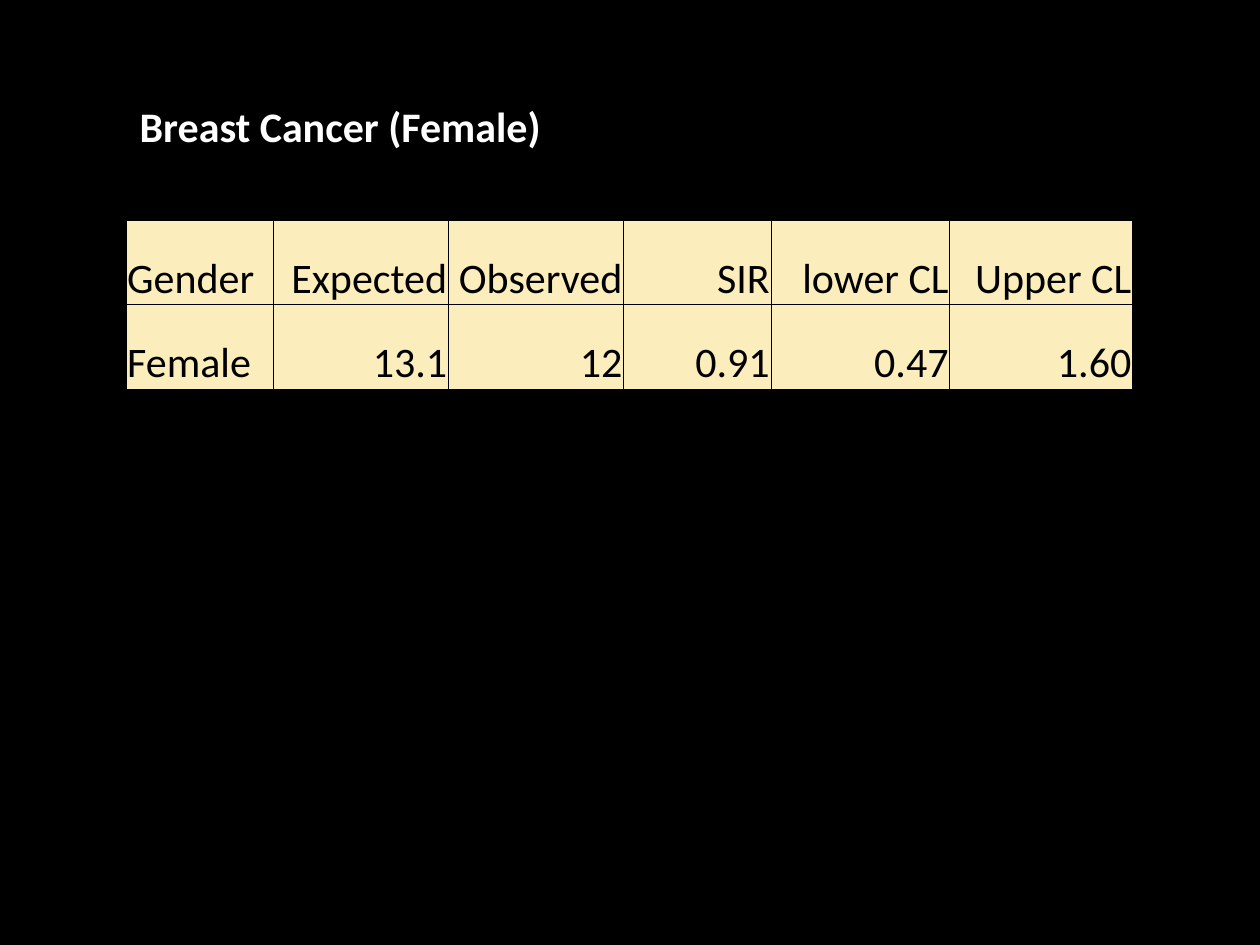
from lxml.etree import SubElement
from pptx import Presentation
from pptx.dml.color import RGBColor
from pptx.enum.text import MSO_ANCHOR, MSO_AUTO_SIZE, PP_ALIGN
from pptx.oxml.ns import qn
from pptx.util import Inches, Pt

TITLE = "Breast Cancer (Female)"
ROWS = [
    ("Gender", "Expected", "Observed", "SIR", "lower CL", "Upper CL"),
    ("Female", "13.1", "12", "0.91", "0.47", "1.60"),
]
COL_WIDTHS = [1.17, 1.39, 1.39, 1.17, 1.42, 1.45]
ROW_HEIGHT = 0.67
COLORS = {"black": "000000", "white": "FFFFFF", "cream": "FCEEBC"}


def rgb(name):
    return RGBColor.from_string(COLORS[name])


def style(p, color, bold=False):
    p.font.name = "Calibri"
    p.font.size = Pt(24)
    p.font.bold = bold
    p.font.color.rgb = rgb(color)


def add_borders(cell):
    tc_pr = cell._tc.get_or_add_tcPr()
    for side in ("lnL", "lnR", "lnT", "lnB"):
        ln = SubElement(tc_pr, qn(f"a:{side}"), w=str(Pt(0.5)))
        fill = SubElement(ln, qn("a:solidFill"))
        SubElement(fill, qn("a:srgbClr"), val=COLORS["black"])


def fill_cell(cell, text, align):
    add_borders(cell)
    cell.fill.solid()
    cell.fill.fore_color.rgb = rgb("cream")
    cell.margin_left = cell.margin_right = cell.margin_top = Inches(0.01)
    cell.margin_bottom = 0
    cell.vertical_anchor = MSO_ANCHOR.BOTTOM
    cell.text = text
    p = cell.text_frame.paragraphs[0]
    p.alignment = align
    style(p, "black")


def add_results(s):
    table = s.shapes.add_table(
        len(ROWS), len(COL_WIDTHS), Inches(1), Inches(1.75),
        Inches(sum(COL_WIDTHS)), Inches(ROW_HEIGHT * len(ROWS))).table
    for column, width in zip(table.columns, COL_WIDTHS):
        column.width = Inches(width)
    for i, row in enumerate(ROWS):
        table.rows[i].height = Inches(ROW_HEIGHT)
        for j, text in enumerate(row):
            align = PP_ALIGN.RIGHT if j else PP_ALIGN.LEFT
            fill_cell(table.cell(i, j), text, align)


def add_title(s):
    sp = s.shapes.add_textbox(Inches(1.01), Inches(0.75), Inches(3.91), Inches(0.51))
    tf = sp.text_frame
    tf.word_wrap = True
    tf.auto_size = MSO_AUTO_SIZE.SHAPE_TO_FIT_TEXT
    tf.text = TITLE
    style(tf.paragraphs[0], "white", bold=True)


def main():
    prs = Presentation()
    prs.slide_width, prs.slide_height = Inches(10), Inches(7.5)
    s = prs.slides.add_slide(prs.slide_layouts[6])
    s.background.fill.solid()
    s.background.fill.fore_color.rgb = rgb("black")
    add_results(s)
    add_title(s)
    prs.save("out.pptx")


if __name__ == "__main__":
    main()
